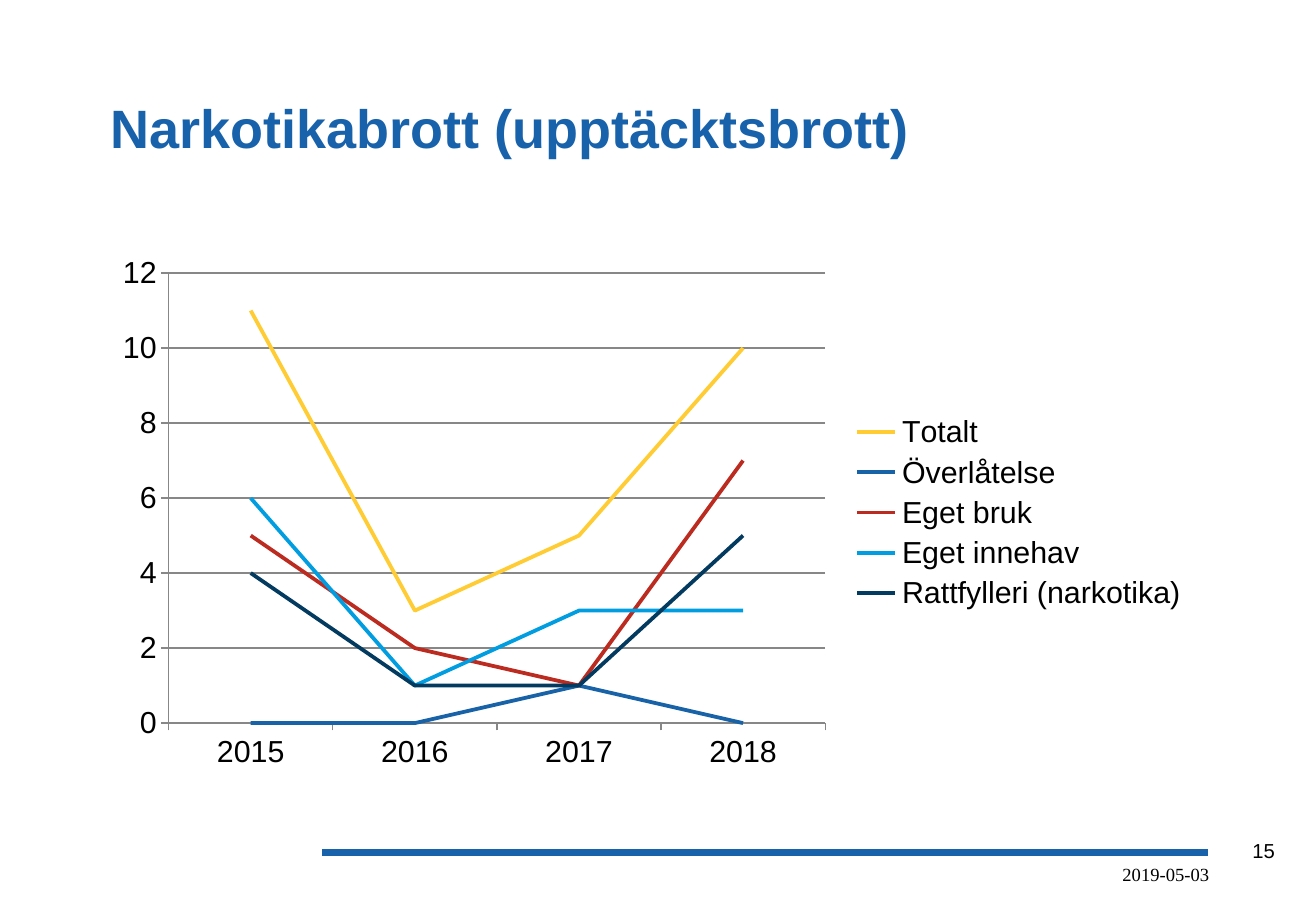
from pptx import Presentation
from pptx.chart.data import CategoryChartData as ChartData
from pptx.dml.color import RGBColor
from pptx.enum.chart import XL_CHART_TYPE as ChartType
from pptx.enum.chart import XL_LEGEND_POSITION as LegendPosition
from pptx.enum.chart import XL_TICK_MARK as TickMark
from pptx.enum.shapes import MSO_CONNECTOR as ConnectorType
from pptx.enum.text import MSO_ANCHOR as Anchor
from pptx.enum.text import PP_ALIGN as Align
from pptx.oxml.ns import qn
from pptx.util import Cm, Pt
from lxml import etree

# Content
TITLE = "Narkotikabrott (upptäcktsbrott)"
YEARS = ["2015", "2016", "2017", "2018"]
OFFENCES = [
    ("Totalt", (11, 3, 5, 10), "FFCC33"),
    ("Överlåtelse", (0, 0, 1, 0), "1862A8"),
    ("Eget bruk", (5, 2, 1, 7), "BB2B20"),
    ("Eget innehav", (6, 1, 3, 3), "009DE0"),
    ("Rattfylleri (narkotika)", (4, 1, 1, 5), "033A5F"),
]
# text, left, top, width, height, left inset, font, size, alignment
FOOTER = [
    ("15", 25.93, 17.4, 1.12, 0.76, 0.25, "Arial", 12, Align.LEFT),
    ("2019-05-03", 8.59, 17.93, 16.94, 0.74, 0, "Times New Roman", 11, Align.RIGHT),
]
BLUE, BLACK, GRID = "1862AB", "000000", "878787"
LEFT, RIGHT = 2.11, 25.25


def color(code):
    return RGBColor.from_string(code)


def style_font(font, name, size, code, bold=False):
    font.name, font.size, font.bold = name, Pt(size), bold
    font.color.rgb = color(code)


def style_line(line, code, width):
    line.color.rgb = color(code)
    line.width = Pt(width)


deck = Presentation()
deck.slide_width, deck.slide_height = Cm(27.51), Cm(19.05)
page = deck.slides.add_slide(deck.slide_layouts[5])

# Title
title = page.shapes.title
title.left, title.top = Cm(LEFT), Cm(1.07)
title.width, title.height = Cm(RIGHT - LEFT), Cm(3.18)
frame = title.text_frame
frame.word_wrap = True
frame.vertical_anchor = Anchor.MIDDLE
frame.margin_left = frame.margin_right = Cm(0.2)
para = frame.paragraphs[0]
para.alignment = Align.LEFT
span = para.add_run()
span.text = TITLE
style_font(span.font, "Arial", 32, BLUE, True)

# Line chart
data = ChartData()
data.categories = YEARS
for name, values, code in OFFENCES:
    data.add_series(name, values)
chart = page.shapes.add_chart(
    ChartType.LINE, Cm(LEFT), Cm(5.13), Cm(22.99), Cm(11.18), data
).chart
chart.has_title = False
style_font(chart.font, "Arial", 18, BLACK)
chart.plots[0].vary_by_categories = False
for series, (name, values, code) in zip(chart.plots[0].series, OFFENCES):
    series.smooth = False
    style_line(series.format.line, code, 2.25)

chart.has_legend = True
chart.legend.position = LegendPosition.RIGHT
chart.legend.include_in_layout = False

# Axes
for axis in (chart.category_axis, chart.value_axis):
    axis.major_tick_mark = TickMark.OUTSIDE
    axis.minor_tick_mark = TickMark.NONE
    style_line(axis.format.line, GRID, 0.75)
scale = chart.value_axis
scale.minimum_scale, scale.maximum_scale, scale.major_unit = 0, 12, 2
scale.has_major_gridlines = True
style_line(scale.major_gridlines.format.line, GRID, 0.75)

# Footer rule
rule = page.shapes.add_connector(
    ConnectorType.STRAIGHT, Cm(6.73), Cm(17.83), Cm(RIGHT), Cm(17.83)
)
style_line(rule.line, BLUE, 4.5)
etree.SubElement(rule.element.spPr, qn("a:effectLst"))

# Page number and date
for text, left, top, width, height, inset, font, size, alignment in FOOTER:
    box = page.shapes.add_textbox(Cm(left), Cm(top), Cm(width), Cm(height))
    frame = box.text_frame
    frame.word_wrap = True
    frame.margin_left = Cm(inset)
    para = frame.paragraphs[0]
    para.alignment = alignment
    span = para.add_run()
    span.text = text
    style_font(span.font, font, size, BLACK)

deck.save("out.pptx")
